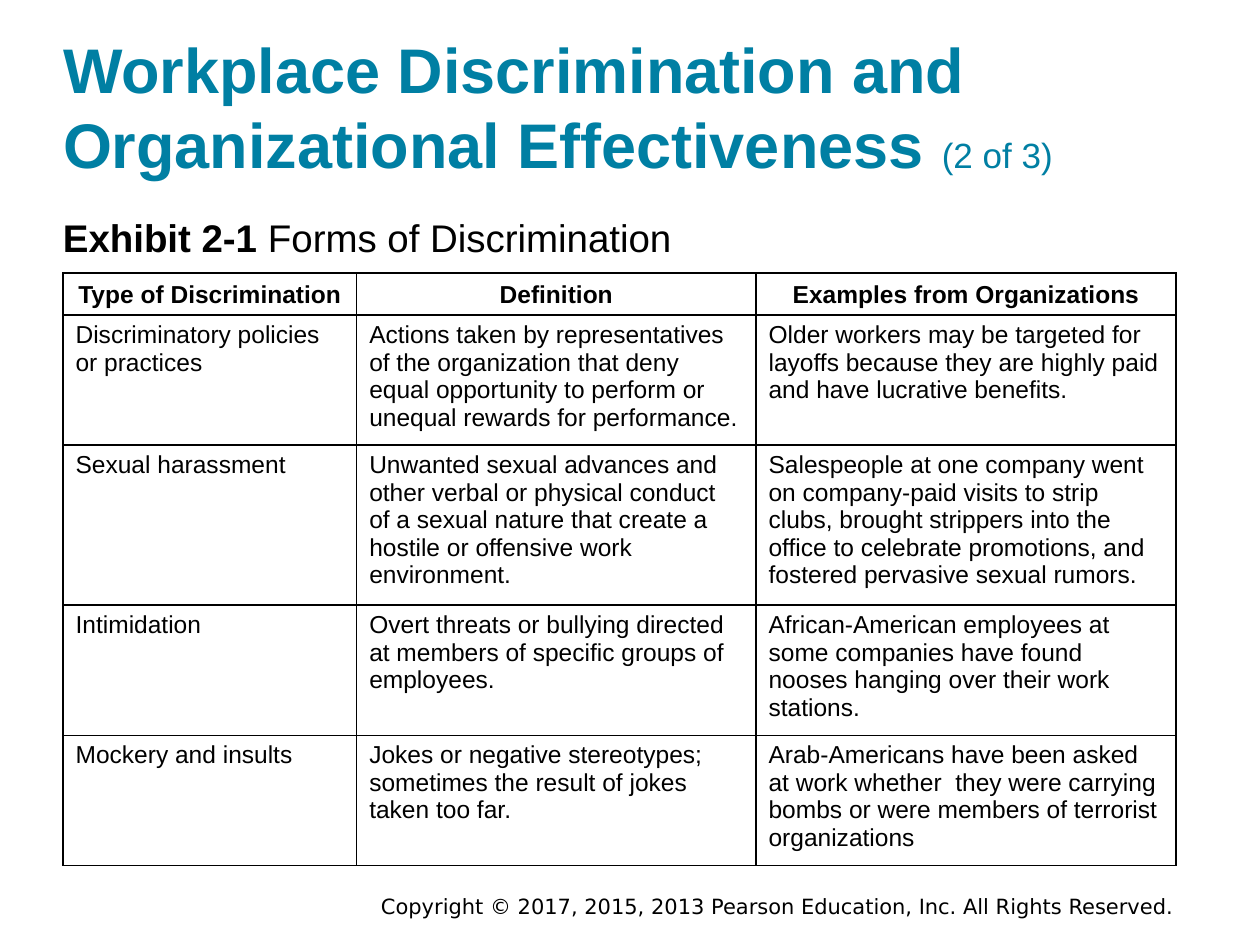
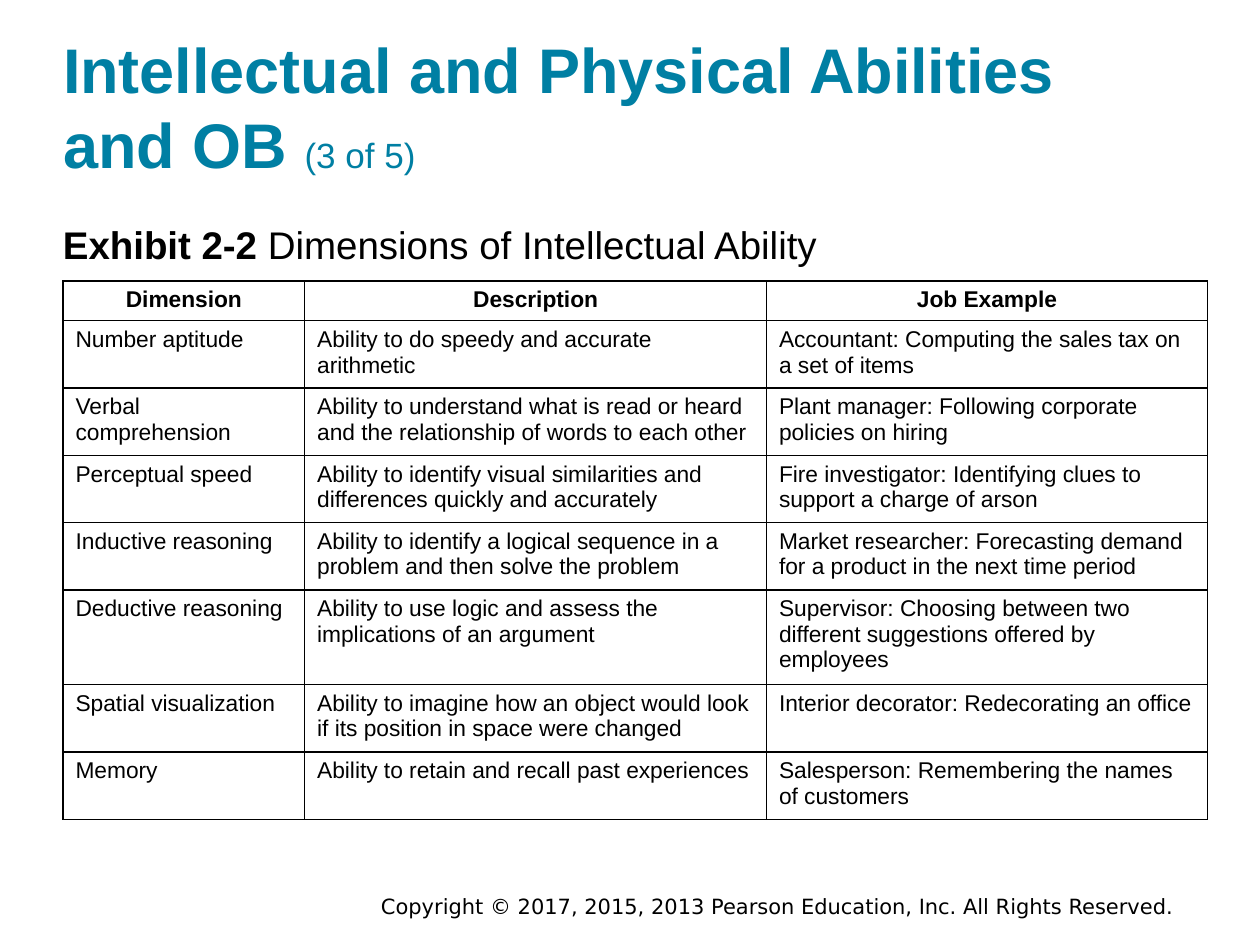
"""Build two exhibit slides on discrimination and intellectual ability."""
from lxml.etree import SubElement
from pptx import Presentation
from pptx.dml.color import RGBColor
from pptx.enum.text import MSO_ANCHOR as Anchor, MSO_AUTO_SIZE as AutoSize, PP_ALIGN as Align
from pptx.oxml.ns import qn
from pptx.util import Cm, Pt

COLOURS = {"heading": "007FA3", "ink": "000000", "paper": "FFFFFF"}
LEFT = Cm(1.27)
BARE_FRAME = {"margin_left": 0, "margin_right": 0, "margin_top": 0, "margin_bottom": 0,
              "word_wrap": True, "auto_size": AutoSize.NONE}
COPYRIGHT = "Copyright © 2017, 2015, 2013 Pearson Education, Inc. All Rights Reserved."

EXHIBITS = [
    {
        "title": "Workplace Discrimination and Organizational Effectiveness ",
        "part": "(2 of 3)", "title_width": 22.86,
        "label": "Exhibit 2-1 ", "caption": "Forms of Discrimination", "caption_top": 4.32,
        "grid_top": 5.5, "columns": [5.92, 8.05, 8.47], "header_height": 0.64,
        "size": 14, "header_anchor": Anchor.BOTTOM,
        "rows": [
            ("Type of Discrimination", "Definition", "Examples from Organizations"),
            ("Discriminatory policies or practices",
             "Actions taken by representatives of the organization that deny equal "
             "opportunity to perform or unequal rewards for performance.",
             "Older workers may be targeted for layoffs because they are highly paid "
             "and have lucrative benefits."),
            ("Sexual harassment",
             "Unwanted sexual advances and other verbal or physical conduct of a sexual "
             "nature that create a hostile or offensive work environment.",
             "Salespeople at one company went on company-paid visits to strip clubs, "
             "brought strippers into the office to celebrate promotions, and fostered "
             "pervasive sexual rumors."),
            ("Intimidation",
             "Overt threats or bullying directed at members of specific groups of employees.",
             "African-American employees at some companies have found nooses hanging "
             "over their work stations."),
            ("Mockery and insults",
             "Jokes or negative stereotypes; sometimes the result of jokes taken too far.",
             "Arab-Americans have been asked at work whether  they were carrying bombs "
             "or were members of terrorist organizations"),
        ],
    },
    {
        "title": "Intellectual and Physical Abilities and OB ",
        "part": "(3 of 5)", "title_width": 21.16,
        "label": "Exhibit 2-2 ", "caption": "Dimensions of Intellectual Ability",
        "caption_top": 4.45,
        "grid_top": 5.66, "columns": [4.87, 9.31, 8.89], "header_height": 0.69,
        "size": 13, "header_anchor": Anchor.TOP,
        "rows": [
            ("Dimension", "Description", "Job Example"),
            ("Number aptitude", "Ability to do speedy and accurate arithmetic",
             "Accountant: Computing the sales tax on a set of items"),
            ("Verbal comprehension",
             "Ability to understand what is read or heard and the relationship of words "
             "to each other",
             "Plant manager: Following corporate policies on hiring"),
            ("Perceptual speed",
             "Ability to identify visual similarities and differences quickly and accurately",
             "Fire investigator: Identifying clues to support a charge of arson"),
            ("Inductive reasoning",
             "Ability to identify a logical sequence in a problem and then solve the problem",
             "Market researcher: Forecasting demand for a product in the next time period"),
            ("Deductive reasoning",
             "Ability to use logic and assess the implications of an argument",
             "Supervisor: Choosing between two different suggestions offered by employees"),
            ("Spatial visualization",
             "Ability to imagine how an object would look if its position in space were changed",
             "Interior decorator: Redecorating an office"),
            ("Memory", "Ability to retain and recall past experiences",
             "Salesperson: Remembering the names of customers"),
        ],
    },
]


def write(frame, pieces, colour, settings, align=Align.LEFT, face="Arial"):
    """Fill the first paragraph with (text, size, bold) pieces."""
    for key, value in settings.items():
        setattr(frame, key, value)
    paragraph = frame.paragraphs[0]
    paragraph.alignment = align
    for text, size, bold in pieces:
        run = paragraph.add_run()
        run.text = text
        for key, value in {"size": Pt(size), "bold": bold, "name": face}.items():
            setattr(run.font, key, value)
        run.font.color.rgb = RGBColor.from_string(COLOURS[colour])


def rule_cell(cell):
    """Give a cell thin rules on all sides and a plain fill."""
    properties = cell._tc.get_or_add_tcPr()
    for side in ("lnL", "lnR", "lnT", "lnB"):
        rule = SubElement(properties, qn(f"a:{side}"), w=str(Pt(1)))
        SubElement(SubElement(rule, qn("a:solidFill")), qn("a:srgbClr"), val=COLOURS["ink"])
    cell.fill.solid()
    cell.fill.fore_color.rgb = RGBColor.from_string(COLOURS["paper"])


deck = Presentation()
deck.slide_width, deck.slide_height = Cm(25.4), Cm(19.05)
title_only = deck.slide_layouts[5]

for exhibit in EXHIBITS:
    slide = deck.slides.add_slide(title_only)

    footer = slide.shapes.add_textbox(Cm(7.19), Cm(17.88), Cm(16.97), Cm(0.76))
    write(footer.text_frame, [(COPYRIGHT, 12, False)], "ink", {"word_wrap": True},
          Align.CENTER, "DejaVu Sans")

    heading = slide.shapes.title
    heading_place = {"left": LEFT, "top": Cm(0.61),
                     "width": Cm(exhibit["title_width"]), "height": Cm(3.05)}
    for key, value in heading_place.items():
        setattr(heading, key, value)
    write(heading.text_frame, [(exhibit["title"], 36, True), (exhibit["part"], 20, False)],
          "heading", BARE_FRAME | {"vertical_anchor": Anchor.BOTTOM})

    caption = slide.shapes.add_textbox(LEFT, Cm(exhibit["caption_top"]), Cm(22.86), Cm(0.84))
    write(caption.text_frame, [(exhibit["label"], 22, True), (exhibit["caption"], 22, False)],
          "ink", BARE_FRAME)

    rows, columns = exhibit["rows"], exhibit["columns"]
    heights = [exhibit["header_height"]] + [1.04] * (len(rows) - 1)
    grid = slide.shapes.add_table(len(rows), len(columns), LEFT, Cm(exhibit["grid_top"]),
                                  Cm(sum(columns)), Cm(sum(heights))).table
    grid.first_row = grid.horz_banding = False
    for column, width in zip(grid.columns, columns):
        column.width = Cm(width)
    for row_index, (row, height, texts) in enumerate(zip(grid.rows, heights, rows)):
        row.height = Cm(height)
        is_header = row_index == 0
        for cell, text in zip(row.cells, texts):
            rule_cell(cell)
            cell.vertical_anchor = exhibit["header_anchor"] if is_header else Anchor.TOP
            write(cell.text_frame, [(text, exhibit["size"], is_header)], "ink", {},
                  Align.CENTER if is_header else Align.LEFT)

deck.save("out.pptx")
